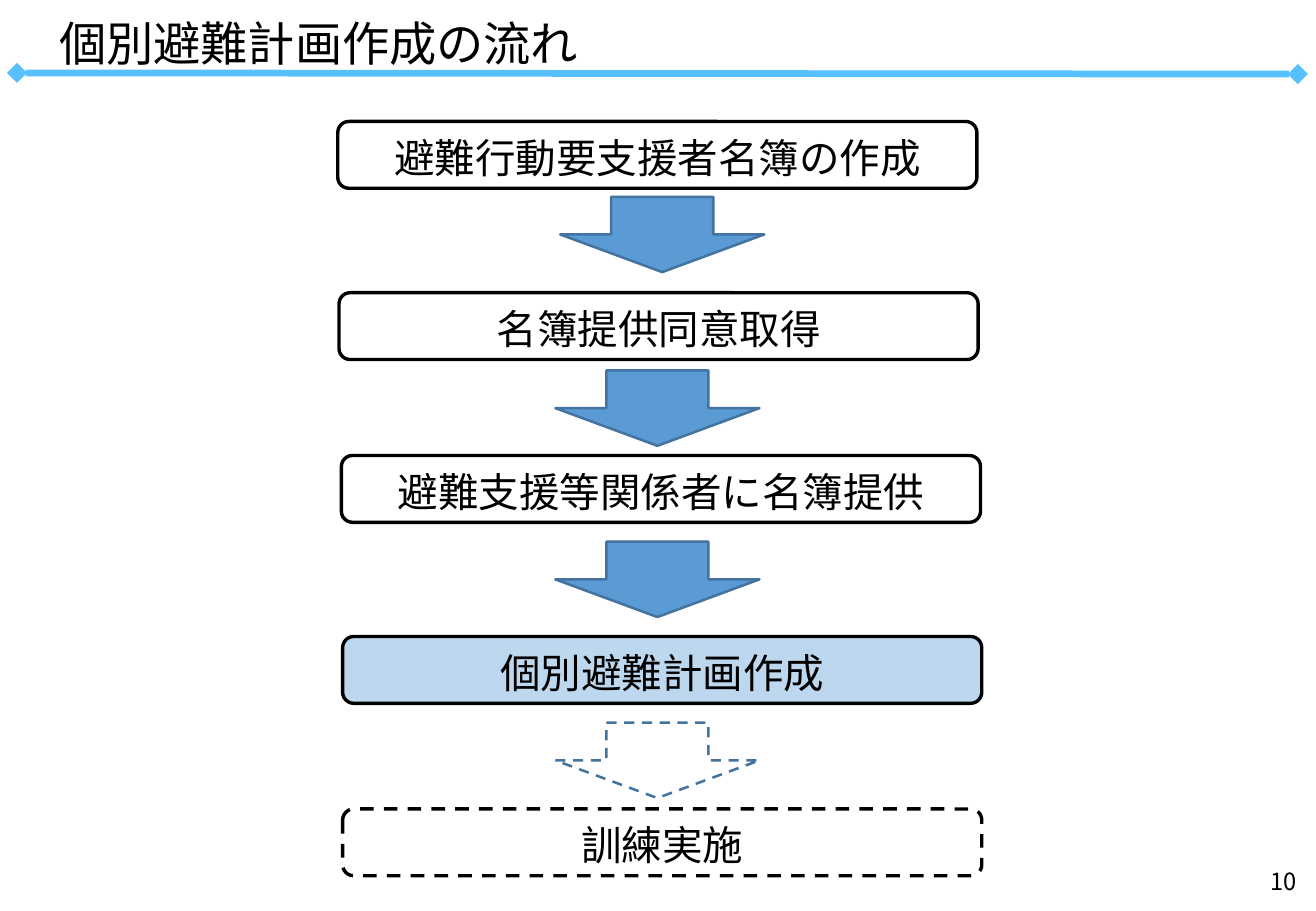
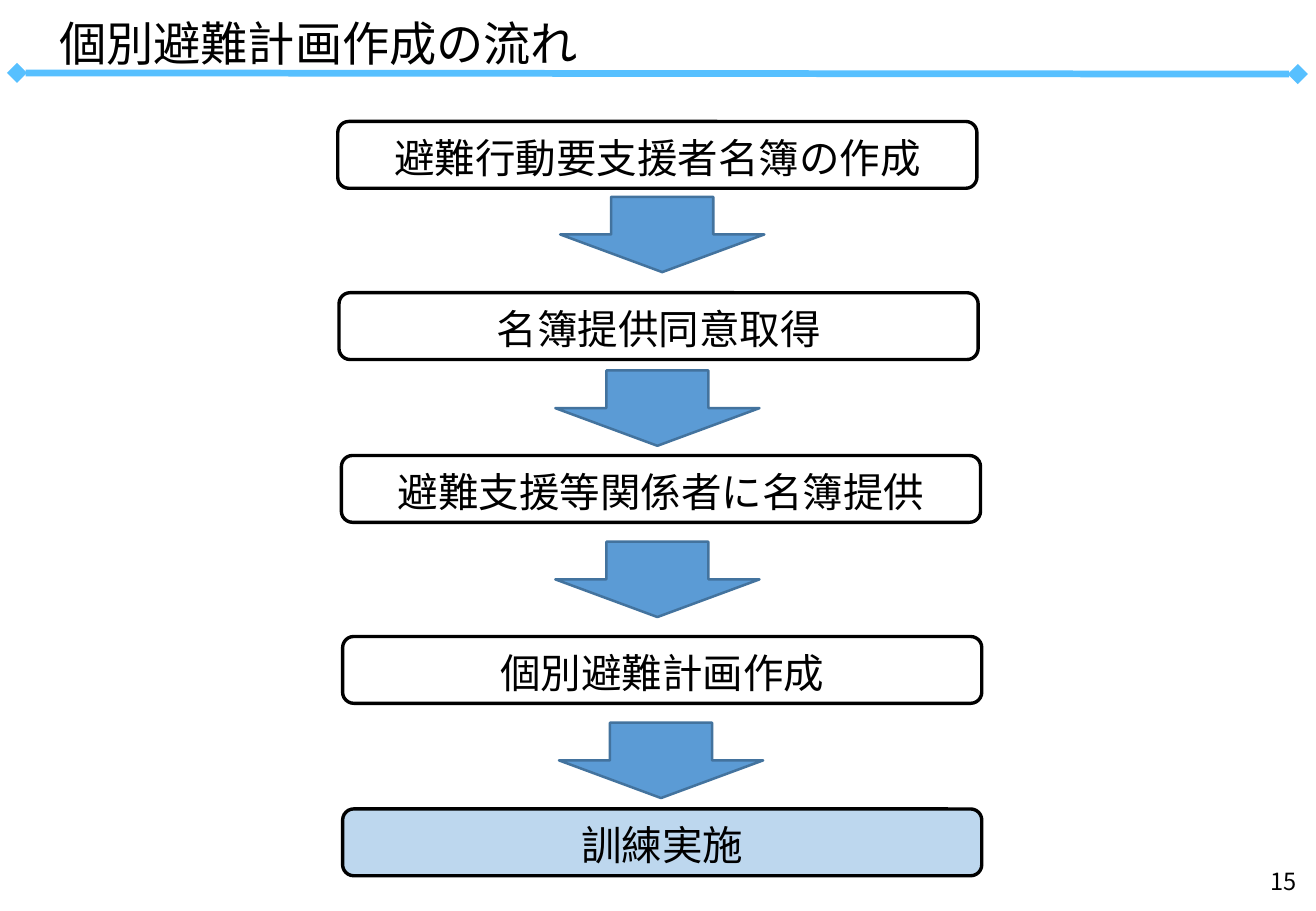
from lxml import etree
from pptx import Presentation
from pptx.dml.color import RGBColor
from pptx.enum.dml import MSO_LINE
from pptx.enum.shapes import MSO_CONNECTOR, MSO_SHAPE
from pptx.enum.text import MSO_ANCHOR, PP_ALIGN
from pptx.oxml.ns import qn
from pptx.util import Inches, Pt

ROUND_BOX, DOWN_ARROW = MSO_SHAPE.ROUNDED_RECTANGLE, MSO_SHAPE.DOWN_ARROW
STRAIGHT, DASH = MSO_CONNECTOR.STRAIGHT, MSO_LINE.DASH
MIDDLE = MSO_ANCHOR.MIDDLE
LEFT, CENTER, RIGHT = PP_ALIGN.LEFT, PP_ALIGN.CENTER, PP_ALIGN.RIGHT

FONT = "Noto Sans CJK JP"
BLACK, WHITE, RULE = "000000", "FFFFFF", "57C0FF"
BLUE, BLUE_EDGE, HIGHLIGHT = "5B9BD5", "43739E", "BDD7EE"

TITLE = "　個別避難計画作成の流れ"
BOX_W, BOX_H = 5.26, 0.55
ARROW_W, ARROW_H = 1.68, 0.62
STEPS = [  # left, top, text
    (2.78, 1.00, "避難行動要支援者名簿の作成"),
    (2.79, 2.41, "名簿提供同意取得"),
    (2.81, 3.75, "避難支援等関係者に名簿提供"),
    (2.82, 5.24, "個別避難計画作成"),
    (2.82, 6.66, "訓練実施"),
]
ARROWS = [(4.61, 1.62), (4.57, 3.05), (4.57, 4.46)]  # left, top
PAGES = [  # page number, highlighted step, left of last arrow, last step dashed
    ("10", 3, 4.57, True),
    ("15", 4, 4.60, False),
]


def put_text(sp, text, size, align):
    tf = sp.text_frame
    tf.word_wrap = True
    tf.text = text
    p = tf.paragraphs[0]
    p.alignment = align
    font = p.runs[0].font
    font.size = Pt(size)
    font.name = FONT
    font.color.rgb = RGBColor.from_string(BLACK)
    ea = etree.SubElement(p.runs[0].font._element, qn("a:ea"))
    ea.set("typeface", FONT)
    return tf


def add_block(s, kind, box, fill, edge, width, dashed):
    sp = s.shapes.add_shape(kind, *[Inches(v) for v in box])
    sp.shadow.inherit = False
    sp.fill.solid()
    sp.fill.fore_color.rgb = RGBColor.from_string(fill)
    sp.line.color.rgb = RGBColor.from_string(edge)
    sp.line.width = Pt(width)
    if dashed:
        sp.line.dash_style = DASH
    return sp


prs = Presentation()
prs.slide_width, prs.slide_height = Inches(10.83), Inches(7.5)

for number, current, last_left, last_dashed in PAGES:
    s = prs.slides.add_slide(prs.slide_layouts[6])

    # Title rule with diamond ends
    rule = s.shapes.add_connector(
        STRAIGHT, Inches(0.14), Inches(0.6), Inches(10.68), Inches(0.61))
    rule.line.color.rgb = RGBColor.from_string(RULE)
    rule.line.width = Pt(4)
    for end in ("a:headEnd", "a:tailEnd"):
        etree.SubElement(rule.line._get_or_add_ln(), qn(end)).set("type", "diamond")
    etree.SubElement(rule._element.spPr, qn("a:effectLst"))

    # Title
    sp = s.shapes.add_textbox(0, Inches(0.12), prs.slide_width, Inches(0.48))
    tf = put_text(sp, TITLE, 28, LEFT)
    tf.margin_top = tf.margin_bottom = 0

    # Steps
    for i, (left, top, text) in enumerate(STEPS):
        dashed = last_dashed and i == len(STEPS) - 1
        fill = HIGHLIGHT if i == current else WHITE
        sp = add_block(s, ROUND_BOX, (left, top, BOX_W, BOX_H), fill, BLACK, 2, dashed)
        tf = put_text(sp, text, 24, CENTER)
        tf.vertical_anchor = MIDDLE
        tf.margin_left = tf.margin_right = tf.margin_top = Inches(0.04)
        tf.margin_bottom = 0

    # Arrows between the steps
    for i, (left, top) in enumerate(ARROWS + [(last_left, 5.95)]):
        dashed = last_dashed and i == len(ARROWS)
        fill = WHITE if dashed else BLUE
        add_block(s, DOWN_ARROW, (left, top, ARROW_W, ARROW_H), fill, BLUE_EDGE, 1.5, dashed)

    # Page number
    sp = s.shapes.add_textbox(Inches(8.5), Inches(7.05), Inches(2.27), Inches(0.4))
    put_text(sp, number, 14, RIGHT).vertical_anchor = MIDDLE

prs.save("out.pptx")
